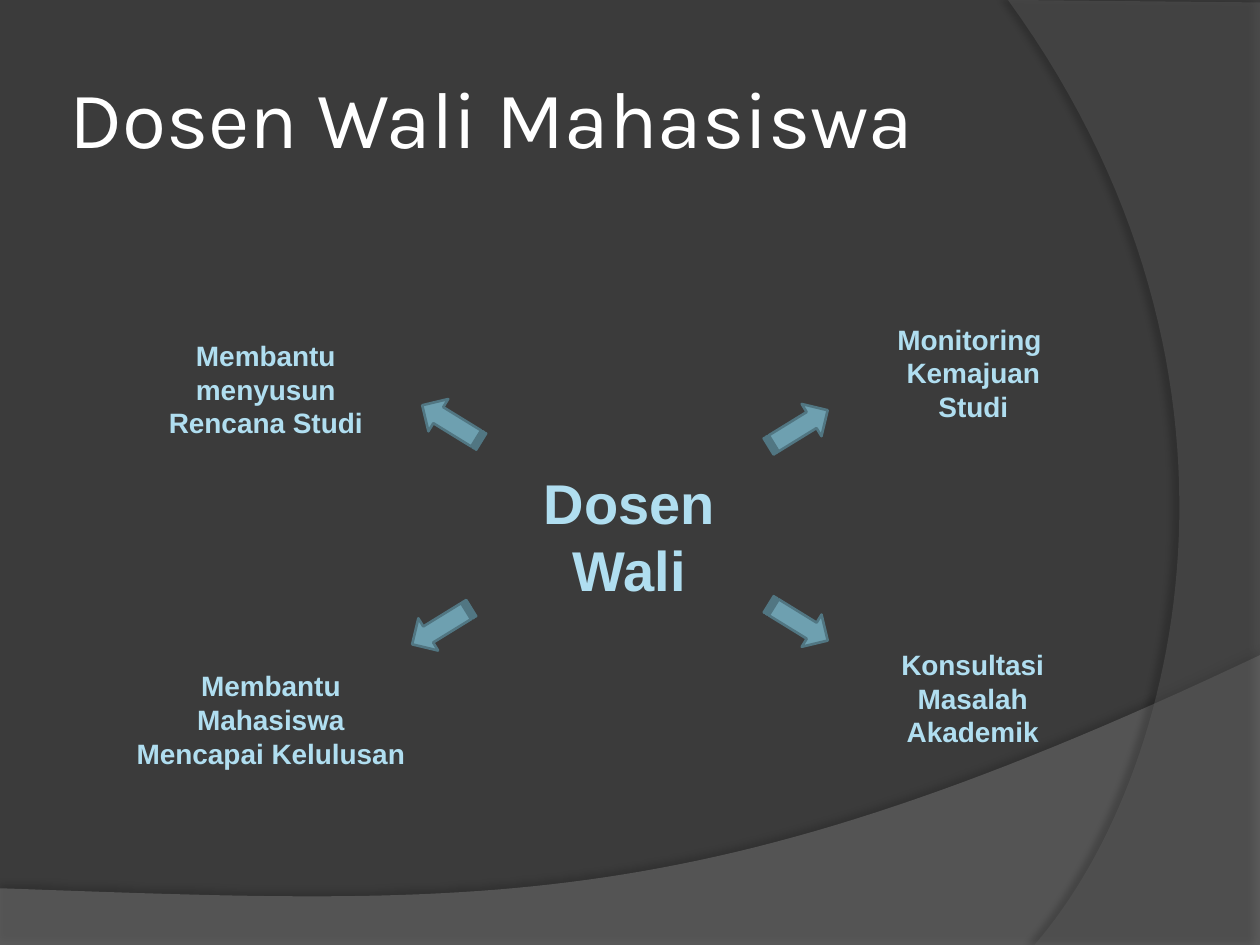
from lxml import etree
from pptx import Presentation
from pptx.dml.color import RGBColor
from pptx.enum.shapes import MSO_SHAPE
from pptx.enum.text import MSO_ANCHOR, PP_ALIGN
from pptx.oxml.ns import qn
from pptx.util import Inches, Pt

CENTER, LEFT = PP_ALIGN.CENTER, PP_ALIGN.LEFT
MIDDLE = MSO_ANCHOR.MIDDLE
STRIPED_ARROW = MSO_SHAPE.STRIPED_RIGHT_ARROW
TITLE_ONLY = 5
CELL = 0.1  # grid of 100 columns by 75 rows, in inches
CURVE_STEPS = 60


def color(value):
    return RGBColor.from_string(value)


def grid(*cells):
    return [Inches(cell * CELL) for cell in cells]


def curve(start, control_1, control_2, end):
    """Points along a cubic curve, from start to end."""
    points = []
    for step in range(CURVE_STEPS + 1):
        t = step / CURVE_STEPS
        weights = ((1 - t) ** 3, 3 * t * (1 - t) ** 2, 3 * t * t * (1 - t), t ** 3)
        points.append(tuple(
            sum(weight * value for weight, value in zip(weights, axis))
            for axis in zip(start, control_1, control_2, end)))
    return points


class SlideBuilder:
    background = "3B3B3B"
    title_font, title_size, title_color = "Karla", 46, "FFFFFF"
    body_font, body_color = "Arial", "B0DEF0"
    arrow_fill, arrow_line = "6EA0B0", "517682"
    arrow_size = (5.5, 3)

    def __init__(self, presentation):
        self.slide = presentation.slides.add_slide(presentation.slide_layouts[TITLE_ONLY])
        fill = self.slide.background.fill
        fill.solid()
        fill.fore_color.rgb = color(self.background)

    def format_text(self, text_frame, font, size, font_color, alignment, bold):
        for paragraph in text_frame.paragraphs:
            paragraph.alignment = alignment
            for run in paragraph.runs:
                run.font.name = font
                run.font.size = Pt(size)
                run.font.bold = bold
                run.font.color.rgb = color(font_color)

    def title(self, text, *box):
        shape = self.slide.shapes.title
        shape.left, shape.top, shape.width, shape.height = grid(*box)
        frame = shape.text_frame
        frame.text = text
        frame.vertical_anchor = MIDDLE
        frame.margin_left = frame.margin_right = Inches(0.05)
        frame.margin_top = frame.margin_bottom = Inches(0.05)
        self.format_text(frame, self.title_font, self.title_size,
                         self.title_color, LEFT, False)

    def label(self, text, *box, size=16):
        frame = self.slide.shapes.add_textbox(*grid(*box)).text_frame
        frame.word_wrap = True
        frame.text = text
        self.format_text(frame, self.body_font, size, self.body_color, CENTER, True)

    def arrow(self, left, top, angle):
        shape = self.slide.shapes.add_shape(
            STRIPED_ARROW, *grid(left, top, *self.arrow_size))
        shape.rotation = angle
        shape.shadow.inherit = False
        shape.fill.solid()
        shape.fill.fore_color.rgb = color(self.arrow_fill)
        shape.line.color.rgb = color(self.arrow_line)
        shape.line.width = Pt(1.5)

    def wave(self, points, fill_color, opacity, shadow_opacity, distance, direction):
        start, *others = [tuple(grid(*point)) for point in points]
        builder = self.slide.shapes.build_freeform(*start)
        builder.add_line_segments(others, close=True)
        shape = builder.convert_to_shape()
        shape.line.fill.background()
        shape.fill.solid()
        shape.fill.fore_color.rgb = color(fill_color)
        properties = shape.fill._xPr
        self.add_alpha(properties.find(".//" + qn("a:srgbClr")), opacity)

        # Soft shadow along the curved edge
        shape.shadow.inherit = False
        shadow = etree.SubElement(
            properties.find(qn("a:effectLst")), qn("a:outerShdw"),
            blurRad=str(Pt(4)), dist=str(Pt(distance)), dir=str(direction * 60000),
            algn="ctr", rotWithShape="0")
        self.add_alpha(etree.SubElement(shadow, qn("a:srgbClr"), val="000000"),
                       shadow_opacity)

        # Place it behind the title
        self.slide.shapes.title.element.addprevious(shape.element)

    def add_alpha(self, color_element, percent):
        etree.SubElement(color_element, qn("a:alpha"), val=str(percent * 1000))


def main():
    presentation = Presentation()
    presentation.slide_width, presentation.slide_height = grid(100, 75)
    builder = SlideBuilder(presentation)

    # Background waves
    builder.wave([(0, 75), (100, 75)]
                 + curve((100, 52), (55.9, 72.9), (39.1, 71.9), (0, 70.5)),
                 "7F7F7F", 45, 35, 3.5, 270)
    builder.wave([(100, 0.2), (100, 75)]
                 + curve((82.1, 75), (93.5, 61.9), (101.8, 30), (80, 0)),
                 "5E5E5E", 40, 45, 4, 180)

    builder.title("Dosen Wali Mahasiswa", 5, 3, 81.7, 12.5)

    # Tasks around the centre
    builder.label("Membantu menyusun\nRencana Studi", 9.8, 26.4, 22.6, 6.4)
    builder.label("Monitoring \nKemajuan Studi", 68.9, 25.1, 16.7, 6.4)
    builder.label("Konsultasi Masalah\nAkademik", 67.2, 50.9, 20, 6.4)
    builder.label("Membantu Mahasiswa\nMencapai Kelulusan", 9.8, 52.6, 23.4, 6.4)
    builder.label("Dosen Wali", 41.3, 36.7, 17.3, 11.8, size=32)

    # Arrows from the centre to each task
    tilt = 31.6
    builder.arrow(60.6, 32.5, 360 - tilt)
    builder.arrow(33.1, 32.1, 180 + tilt)
    builder.arrow(32.3, 48.2, 180 - tilt)
    builder.arrow(60.6, 47.9, tilt)

    presentation.save("out.pptx")


if __name__ == "__main__":
    main()
